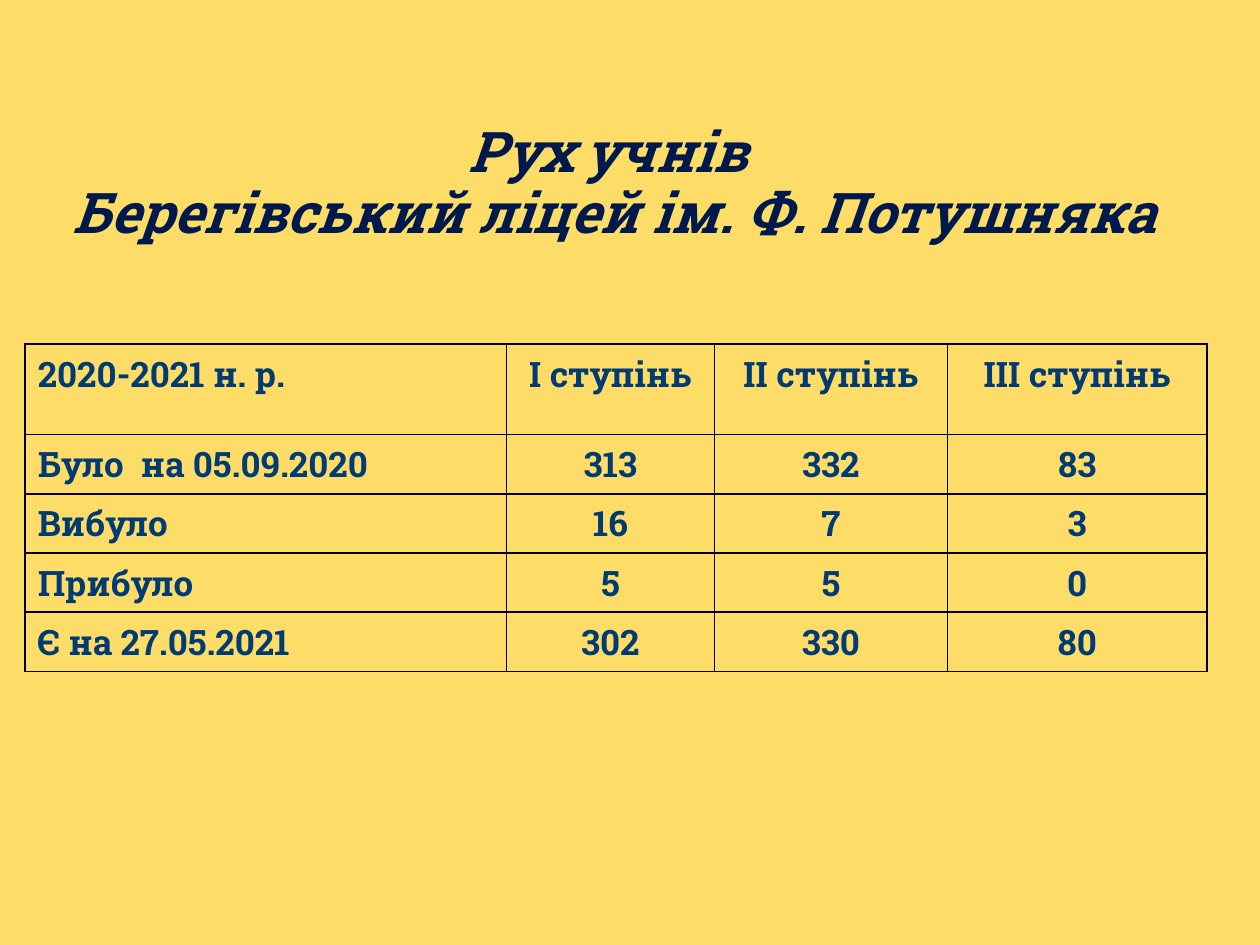
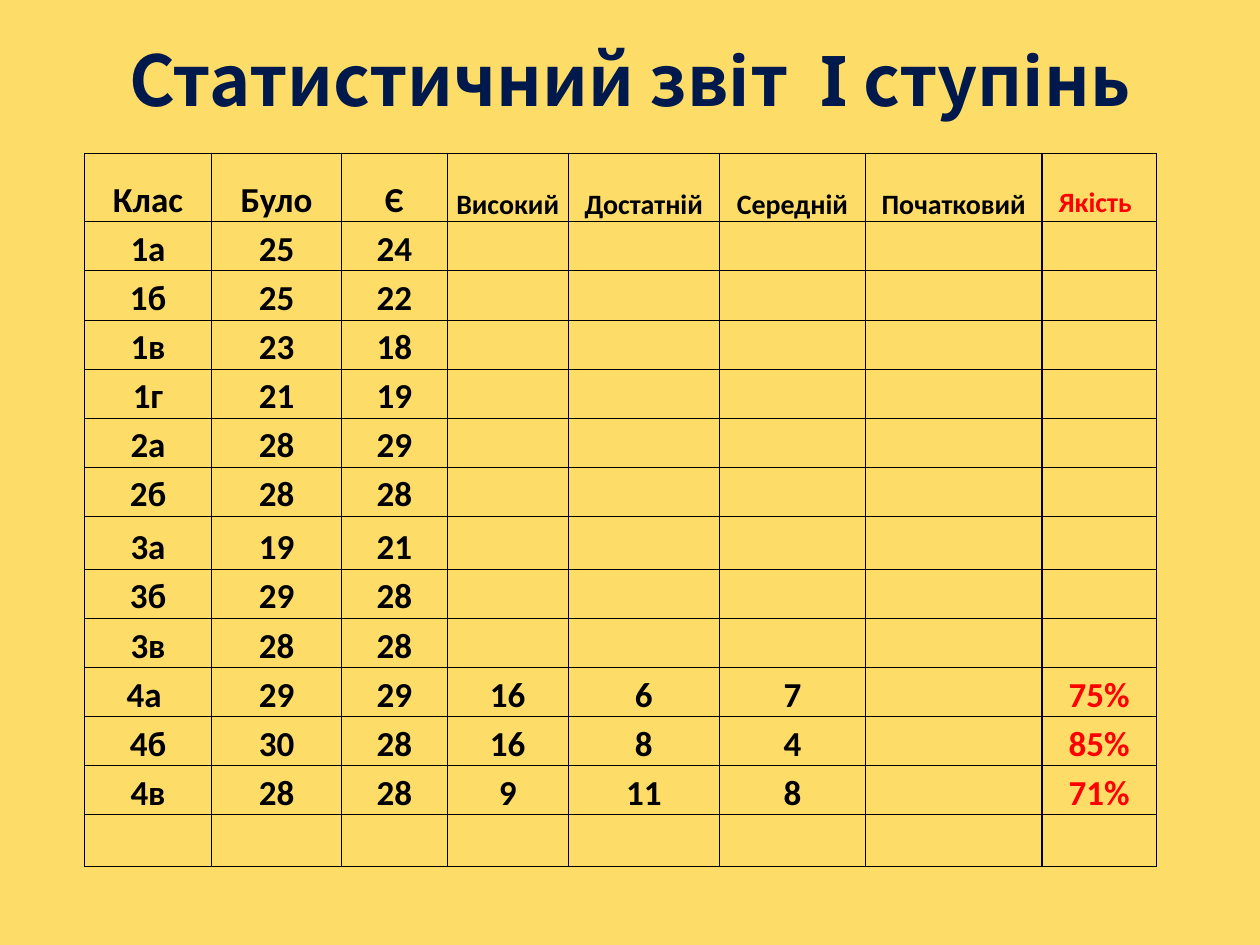
from lxml import etree
from pptx import Presentation
from pptx.dml.color import RGBColor
from pptx.enum.text import MSO_ANCHOR, MSO_AUTO_SIZE, PP_ALIGN
from pptx.oxml.ns import qn
from pptx.util import Emu, Pt

LEFT, MID = PP_ALIGN.LEFT, PP_ALIGN.CENTER
TOP, CENTER, BOTTOM = MSO_ANCHOR.TOP, MSO_ANCHOR.MIDDLE, MSO_ANCHOR.BOTTOM
FIXED = MSO_AUTO_SIZE.NONE

SCALE = 9144  # 100 px to the inch
SAND, NAVY, BLUE, BLACK, RED = "FDDD68", "00194C", "003B76", "000000", "FF0000"


def px(num):
    return Emu(num * SCALE)


def color(code):
    return RGBColor.from_string(code)


class Deck:
    def __init__(self):
        self.prs = Presentation()
        self.prs.slide_width, self.prs.slide_height = px(1000), px(750)
        self.slide = None

    def page(self):
        self.slide = self.prs.slides.add_slide(self.prs.slide_layouts[5])
        fill = self.slide.background.fill
        fill.solid()
        fill.fore_color.rgb = color(SAND)

    def run(self, para, text, font, size, tint, slant=False):
        run = para.add_run()
        run.text = text
        run.font.name, run.font.size = font, Pt(size)
        run.font.bold, run.font.italic = True, slant
        run.font.color.rgb = color(tint)

    def title(self, box, lines, font, size, slant=False):
        shape = self.slide.shapes.title
        shape.left, shape.top, shape.width, shape.height = map(px, box)
        frame = shape.text_frame
        frame.auto_size, frame.word_wrap = FIXED, True
        frame.vertical_anchor = CENTER
        para = frame.paragraphs[0]
        para.alignment, para.line_spacing = MID, 0.9
        for num, line in enumerate(lines):
            if num:
                para.add_line_break()
            self.run(para, line, font, size, NAVY, slant)

    def table(self, left, top, cols, rows):
        """Add an empty table without fills."""
        shape = self.slide.shapes.add_table(
            len(rows), len(cols), px(left), px(top), px(sum(cols)), px(sum(rows)))
        table = shape.table
        table.first_row = table.horz_banding = False
        for col, wide in zip(table.columns, cols):
            col.width = px(wide)
        for row, high in zip(table.rows, rows):
            row.height = px(high)
        for cell in table.iter_cells():
            cell.fill.background()
        return table

    def rule(self, table, thin, thick):
        """Draw cell borders, thick at top, bottom and around the last column."""
        low, end = len(table.rows) - 1, len(table.columns) - 1
        for r in range(low + 1):
            for c in range(end + 1):
                heavy = {"L": c == end, "R": c >= end - 1,
                         "T": r == 0, "B": r == low}
                props = table.cell(r, c)._tc.get_or_add_tcPr()
                for spot, (side, bold) in enumerate(heavy.items()):
                    line = etree.Element(qn("a:ln" + side),
                                         w=str(Pt(thick if bold else thin)))
                    fill = etree.SubElement(line, qn("a:solidFill"))
                    etree.SubElement(fill, qn("a:srgbClr"), val=BLACK)
                    props.insert(spot, line)

    def cell(self, cell, runs, font, align=MID, anchor=TOP, hang=0):
        """Fill a cell with (text, size, colour) runs."""
        cell.vertical_anchor = anchor
        para = cell.text_frame.paragraphs[0]
        para.alignment = align
        if hang:
            props = para._p.get_or_add_pPr()
            props.set("marL", str(px(hang)))
            props.set("indent", str(px(-hang)))
        for text, size, tint in runs:
            self.run(para, text, font, size, tint)


def moves(deck):
    slab = "Roboto Slab"
    deck.page()
    deck.title((0, 52, 976, 189),
               ["Рух учнів ", "Берегівський ліцей ім. Ф. Потушняка"],
               slab, 32, True)
    data = [
        ("2020-2021 н. р.", "І ступінь", "ІІ ступінь", "ІІІ ступінь"),
        ("Було  на 05.09.2020", 313, 332, 83),
        ("Вибуло", 16, 7, 3),
        ("Прибуло", 5, 5, 0),
        ("Є на 27.05.2021", 302, 330, 80),
    ]
    table = deck.table(20, 273, [382, 165, 185, 206], [72] + [47] * 4)
    deck.rule(table, 1, 1)
    for r, row in enumerate(data):
        for c, text in enumerate(row):
            deck.cell(table.cell(r, c), [(str(text), 20, BLUE)], slab,
                      MID if c else LEFT, hang=38)


def report(deck):
    deck.page()
    deck.title((0, 25, 1000, 83), ["Статистичний звіт  І ступінь"],
               "Noto Sans CJK KR", 40)
    heads = ["Клас", "Було", "Є", "Високий", "Достатній", "Середній",
             "Початковий", "Якість"]
    data = [
        ("1а", 25, 24), ("1б", 25, 22), ("1в", 23, 18), ("1г", 21, 19),
        ("2а", 28, 29), ("2б", 28, 28),
        ("3а", 19, 21), ("3б", 29, 28), ("3в", 28, 28),
        ("4а ", 29, 29, 16, 6, 7, "", "75%"),
        ("4б", 30, 28, 16, 8, 4, "", "85%"),
        ("4в", 28, 28, 9, 11, 8, "", "71%"),
    ]
    table = deck.table(67, 122, [101, 103, 84, 96, 120, 116, 140, 91],
                       [54] + [39] * 6 + [42] + [39] * 5 + [41])
    deck.rule(table, 0.5, 1)
    for cell in table.iter_cells():
        cell.margin_left = cell.margin_right = cell.margin_top = px(1)
        cell.margin_bottom = 0
    last = len(heads) - 1
    for r, row in enumerate([heads] + data):
        for c, text in enumerate(row):
            if text == "":
                continue
            tint = RED if c == last else BLACK
            runs = [(str(text), 16 if r == 0 and c > 2 else 20, tint)]
            if r == 0 and c == last:
                runs.append((" ", 20, tint))
            deck.cell(table.cell(r, c), runs, "Calibri", anchor=BOTTOM)


def main():
    deck = Deck()
    moves(deck)
    report(deck)
    deck.prs.save("out.pptx")


if __name__ == "__main__":
    main()
